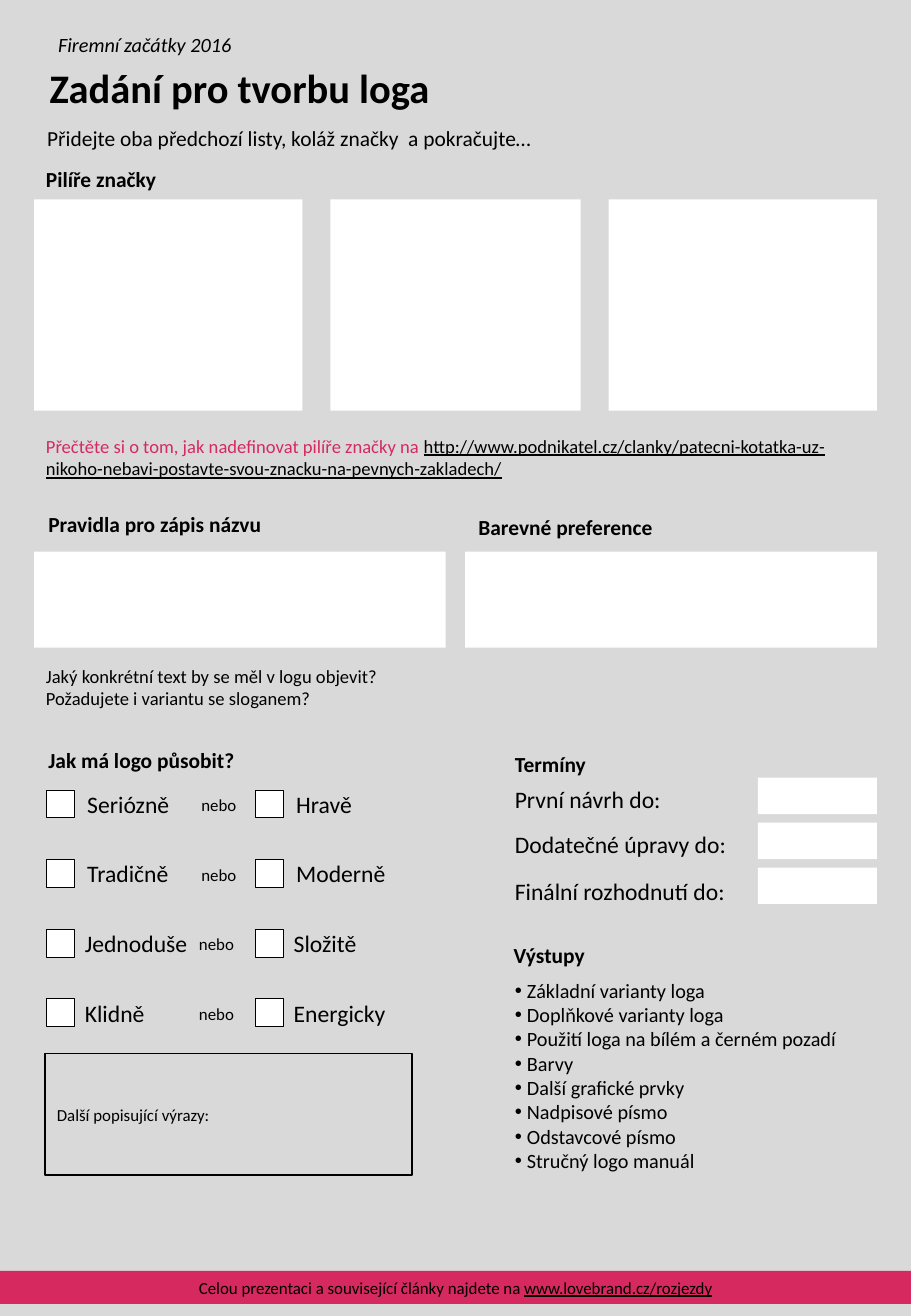
from pptx import Presentation
from pptx.dml.color import RGBColor
from pptx.enum.shapes import MSO_SHAPE
from pptx.enum.text import MSO_ANCHOR, PP_ALIGN
from pptx.oxml import parse_xml
from pptx.oxml.ns import nsdecls
from pptx.util import Inches, Pt

COLORS = {"paper": "D9D9D9", "accent": "D62960", "ink": "000000", "field": "FFFFFF"}
FONT = "Calibri"
HEADING = 12.7
LABEL = 14

PILLARS = [(0.28, 2.21), (2.72, 2.06), (5.01, 2.21)]
# Each pair of impressions with its small shift to the left
IMPRESSIONS = [
    ("Seriózně", "Hravě", 0),
    ("Tradičně", "Moderně", 0),
    ("Jednoduše", "Složitě", 0.02),
    ("Klidně", "Energicky", 0.02),
]
DEADLINES = [
    ("První návrh do:", 6.41),
    ("Dodatečné úpravy do:", 6.78),
    ("Finální rozhodnutí do:", 7.17),
]
OUTPUTS = [
    "Základní varianty loga",
    "Doplňkové varianty loga",
    "Použití loga na bílém a černém pozadí",
    "Barvy",
    "Další grafické prvky",
    "Nadpisové písmo",
    "Odstavcové písmo",
    "Stručný logo manuál",
]


def rgb(name):
    return RGBColor.from_string(COLORS[name])


def add_span(para, text, size, color="ink", bold=False, italic=False, underline=False):
    span = para.add_run()
    span.text = text
    font = span.font
    font.name = FONT
    font.size = Pt(size)
    font.color.rgb = rgb(color)
    font.bold = bold
    font.italic = italic
    font.underline = underline


def add_box(page, left, top, width, height):
    box = page.shapes.add_textbox(Inches(left), Inches(top), Inches(width), Inches(height))
    box.text_frame.word_wrap = True
    return box.text_frame


def add_label(page, text, left, top, width, height, size, **style):
    frame = add_box(page, left, top, width, height)
    add_span(frame.paragraphs[0], text, size, **style)
    return frame


def add_heading(page, text, left, top):
    add_label(page, text, left, top, 3.2, 0.31, HEADING, bold=True)


def add_panel(page, left, top, width, height, fill="field", line_width=None):
    panel = page.shapes.add_shape(
        MSO_SHAPE.RECTANGLE, Inches(left), Inches(top), Inches(width), Inches(height))
    panel.shadow.inherit = False
    if fill:
        panel.fill.solid()
        panel.fill.fore_color.rgb = rgb(fill)
    else:
        panel.fill.background()
    if line_width:
        panel.line.color.rgb = rgb("ink")
        panel.line.width = Pt(line_width)
    else:
        panel.line.fill.background()
    return panel


def add_panel_text(panel, align):
    frame = panel.text_frame
    frame.word_wrap = True
    frame.vertical_anchor = MSO_ANCHOR.MIDDLE
    para = frame.paragraphs[0]
    para.alignment = align
    return para


def add_bullets(page, items, left, top, width, height):
    frame = add_box(page, left, top, width, height)
    for index, item in enumerate(items):
        para = frame.add_paragraph() if index else frame.paragraphs[0]
        properties = para._p.get_or_add_pPr()
        properties.set("marL", str(Inches(0.1)))
        properties.set("indent", str(-Inches(0.1)))
        properties.append(parse_xml(f'<a:buFont {nsdecls("a")} typeface="Arial"/>'))
        properties.append(parse_xml(f'<a:buChar {nsdecls("a")} char="•"/>'))
        add_span(para, item, 12)


def add_impressions(page):
    add_heading(page, "Jak má logo působit?", 0.3, 6.1)
    for row, (first, second, shift) in enumerate(IMPRESSIONS):
        top = 6.5 + row * 0.573
        for left, word in ((0.38, first), (2.1, second)):
            add_panel(page, left, top, 0.23, 0.23, line_width=0.25)
            add_label(page, word, left + 0.24 - shift, top - 0.05, 1.33, 0.34, LABEL)
        add_label(page, "nebo", 1.56 - shift, top - 0.01, 0.56, 0.27, 10)
    notes = add_panel(page, 0.37, 8.67, 3.02, 1, fill=None, line_width=1)
    add_span(add_panel_text(notes, PP_ALIGN.LEFT), "Další popisující výrazy:", 10)


def add_deadlines(page):
    add_heading(page, "Termíny", 4.14, 6.13)
    for row, (text, top) in enumerate(DEADLINES):
        add_label(page, text, 4.14, top, 1.97, 0.34, LABEL)
        add_panel(page, 6.24, 6.4 + row * 0.37, 0.98, 0.3)


def main():
    deck = Presentation()
    deck.slide_width = Inches(7.5)
    deck.slide_height = Inches(10.83)
    page = deck.slides.add_slide(deck.slide_layouts[6])
    page.background.fill.solid()
    page.background.fill.fore_color.rgb = rgb("paper")

    # Title and introduction
    add_label(page, "Firemní začátky 2016", 0.38, 0.22, 4, 0.3, 12, italic=True)
    title = add_label(page, "Zadání pro tvorbu loga", 0.31, 0.43, 6.75, 0.57, 24, bold=True)
    title.vertical_anchor = MSO_ANCHOR.MIDDLE
    add_label(page, "Přidejte oba předchozí listy, koláž značky  a pokračujte…",
              0.29, 0.98, 5.83, 0.31, HEADING)

    # Brand pillars
    add_heading(page, "Pilíře značky", 0.28, 1.32)
    for left, width in PILLARS:
        add_panel(page, left, 1.64, width, 1.74)
    advice = add_label(page, "Přečtěte si o tom, jak nadefinovat pilíře značky na ",
                       0.28, 3.53, 6.94, 0.47, 11, color="accent")
    add_span(advice.paragraphs[0],
             "http://www.podnikatel.cz/clanky/patecni-kotatka-uz-nikoho-nebavi-"
             "postavte-svou-znacku-na-pevnych-zakladech/", 11, underline=True)

    # Name rules and colour preferences
    add_heading(page, "Pravidla pro zápis názvu", 0.3, 4.16)
    add_heading(page, "Barevné preference", 3.84, 4.18)
    for left in (0.28, 3.83):
        add_panel(page, left, 4.54, 3.39, 0.79)
    add_label(page, "Jaký konkrétní text by se měl v logu objevit? "
              "Požadujete i variantu se sloganem?", 0.28, 5.42, 3.37, 0.47, 11)

    # Impressions, deadlines and outputs
    add_impressions(page)
    add_deadlines(page)
    add_heading(page, "Výstupy", 4.13, 7.7)
    add_bullets(page, OUTPUTS, 4.14, 8, 3.3, 1.72)

    # Footer band
    footer = add_panel(page, 0, 10.46, 7.5, 0.27, fill="accent")
    para = add_panel_text(footer, PP_ALIGN.CENTER)
    add_span(para, "Celou prezentaci a související články najdete na ", 10)
    add_span(para, "www.lovebrand.cz/rozjezdy", 10, underline=True)

    deck.save("out.pptx")


if __name__ == "__main__":
    main()
